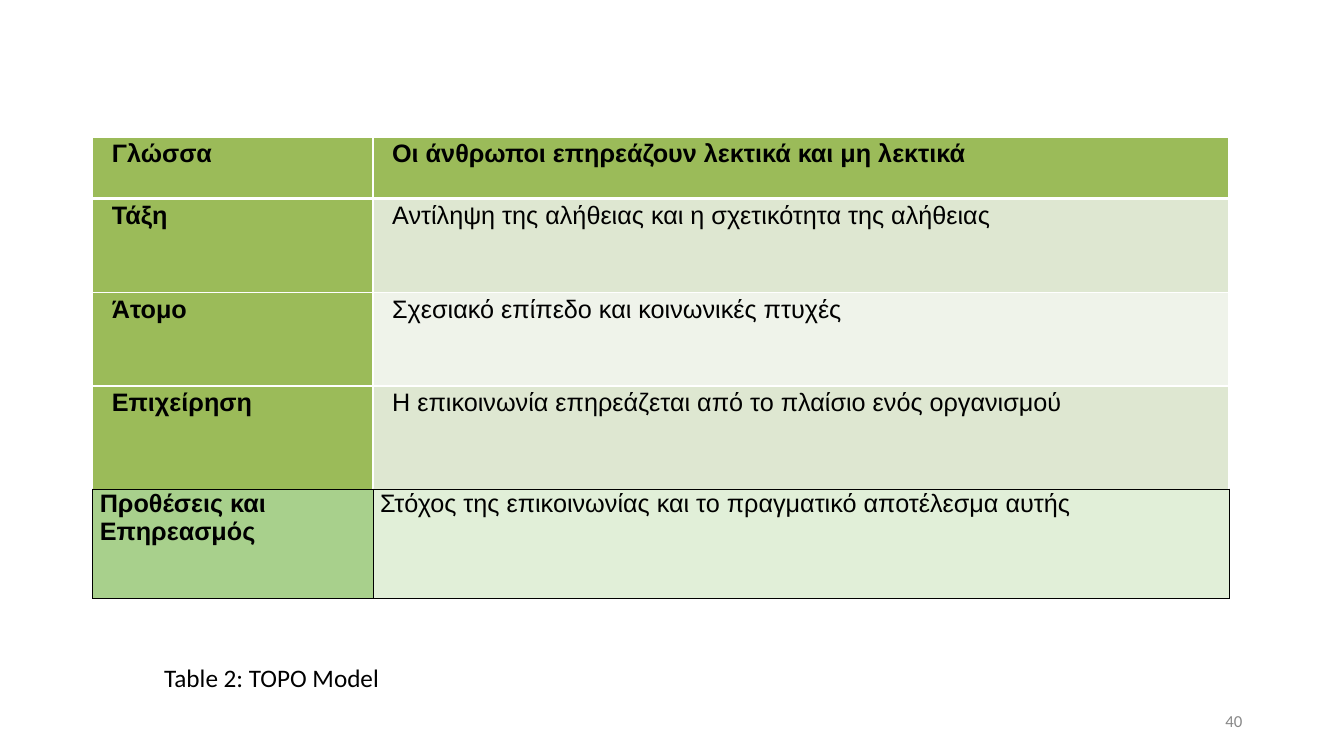
from lxml import etree
from pptx import Presentation
from pptx.dml.color import RGBColor
from pptx.enum.text import MSO_ANCHOR, MSO_AUTO_SIZE, PP_ALIGN
from pptx.oxml.ns import qn
from pptx.util import Inches, Pt

TOP, MIDDLE = MSO_ANCHOR.TOP, MSO_ANCHOR.MIDDLE
FIT_SHAPE, NO_FIT = MSO_AUTO_SIZE.SHAPE_TO_FIT_TEXT, MSO_AUTO_SIZE.NONE
LEFT, RIGHT = PP_ALIGN.LEFT, PP_ALIGN.RIGHT

BLACK = RGBColor(0x00, 0x00, 0x00)
WHITE = RGBColor(0xFF, 0xFF, 0xFF)
GREY = RGBColor(0x88, 0x88, 0x88)
OLIVE = RGBColor(0x9B, 0xBB, 0x59)
BAND_DARK = RGBColor(0xDE, 0xE7, 0xD1)
BAND_LIGHT = RGBColor(0xEF, 0xF3, 0xEA)
GREEN = RGBColor(0xA8, 0xD0, 0x8C)
PALE_GREEN = RGBColor(0xE1, 0xEF, 0xD8)

COLUMN_WIDTHS = (2.78, 8.49)
MODEL_ROWS = [
    ("Γλώσσα", "Οι άνθρωποι επηρεάζουν λεκτικά και μη λεκτικά", OLIVE, OLIVE, 0.61),
    ("Τάξη", "Αντίληψη της αλήθειας και η σχετικότητα της αλήθειας", OLIVE, BAND_DARK, 0.93),
    ("Άτομο", "Σχεσιακό επίπεδο και κοινωνικές πτυχές", OLIVE, BAND_LIGHT, 0.93),
    ("Επιχείρηση", "Η επικοινωνία επηρεάζεται από το πλαίσιο ενός οργανισμού", OLIVE, BAND_DARK, 1.32),
]
INTENT_ROWS = [
    ("Προθέσεις και Επηρεασμός", "Στόχος της επικοινωνίας και το πραγματικό αποτέλεσμα αυτής",
     GREEN, PALE_GREEN, 1.09),
]
MODEL_FORMAT = {"side": 0.19, "top": 0.03, "border": WHITE, "border_pt": 1, "header_pt": 3}
INTENT_FORMAT = {"side": 0.07, "top": 0.01, "border": BLACK, "border_pt": 0.5, "header_pt": None}


def set_values(target, values):
    """Set every attribute in values on target."""
    for name, value in values.items():
        setattr(target, name, value)


def set_font(font, name, size, color, bold=False):
    """Give a font its face, size, colour and weight."""
    set_values(font, {"name": name, "size": Pt(size), "bold": bold})
    font.color.rgb = color


def set_borders(cell, color, widths):
    """Draw the cell's left, right, top and bottom borders in the given widths."""
    properties = cell._tc.get_or_add_tcPr()
    for index, (side, width) in enumerate(zip("LRTB", widths)):
        line = etree.Element(qn(f"a:ln{side}"), w=str(Pt(width)))
        fill = etree.SubElement(line, qn("a:solidFill"))
        etree.SubElement(fill, qn("a:srgbClr"), val=str(color))
        properties.insert(index, line)


def add_green_table(slide, left, top, rows, look):
    """Place a two-column table of bold topics and their descriptions."""
    height = sum(row[-1] for row in rows)
    table = slide.shapes.add_table(len(rows), len(COLUMN_WIDTHS), Inches(left), Inches(top),
                                   Inches(sum(COLUMN_WIDTHS)), Inches(height)).table
    set_values(table, {"first_row": False, "horz_banding": False})
    for column, width in zip(table.columns, COLUMN_WIDTHS):
        column.width = Inches(width)
    margins = {"margin_left": Inches(look["side"]), "margin_right": Inches(look["side"]),
               "margin_top": Inches(look["top"]), "margin_bottom": 0}
    border, header_border = look["border_pt"], look["header_pt"]
    for row_index, (topic, description, topic_fill, description_fill, row_height) in enumerate(rows):
        table.rows[row_index].height = Inches(row_height)
        is_header = header_border is not None and row_index == 0
        above = header_border if header_border and row_index == 1 else border
        below = header_border if is_header else border
        columns = ((topic, topic_fill, True), (description, description_fill, is_header))
        for column_index, (text, fill, bold) in enumerate(columns):
            cell = table.cell(row_index, column_index)
            set_values(cell, {"text": text, "vertical_anchor": TOP, **margins})
            set_font(cell.text_frame.paragraphs[0].runs[0].font, "Arial", 18, BLACK, bold)
            cell.fill.solid()
            cell.fill.fore_color.rgb = fill
            set_borders(cell, look["border"], (border, border, above, below))


def add_label(slide, box, text, size, color, alignment=LEFT, anchor=TOP, fit=NO_FIT):
    """Place one line of Calibri text in the given box."""
    frame = slide.shapes.add_textbox(*map(Inches, box)).text_frame
    set_values(frame, {"text": text, "word_wrap": True, "vertical_anchor": anchor, "auto_size": fit})
    frame.paragraphs[0].alignment = alignment
    set_font(frame.paragraphs[0].runs[0].font, "Calibri", size, color)


def build_topo_slide(presentation):
    """Add the slide with the TOPO model tables, caption and page number."""
    slide = presentation.slides.add_slide(presentation.slide_layouts[6])
    add_green_table(slide, 0.92, 1.36, MODEL_ROWS, MODEL_FORMAT)
    add_green_table(slide, 0.92, 4.85, INTENT_ROWS, INTENT_FORMAT)
    add_label(slide, (1.53, 6.52, 9.14, 0.4), "Table 2: TOPO Model", 18, BLACK, fit=FIT_SHAPE)
    add_label(slide, (9.42, 6.95, 3, 0.4), "40", 12, GREY, RIGHT, MIDDLE)


def main():
    """Build and save the presentation."""
    presentation = Presentation()
    set_values(presentation, {"slide_width": Inches(13.33), "slide_height": Inches(7.5)})
    build_topo_slide(presentation)
    presentation.save("out.pptx")


if __name__ == "__main__":
    main()
